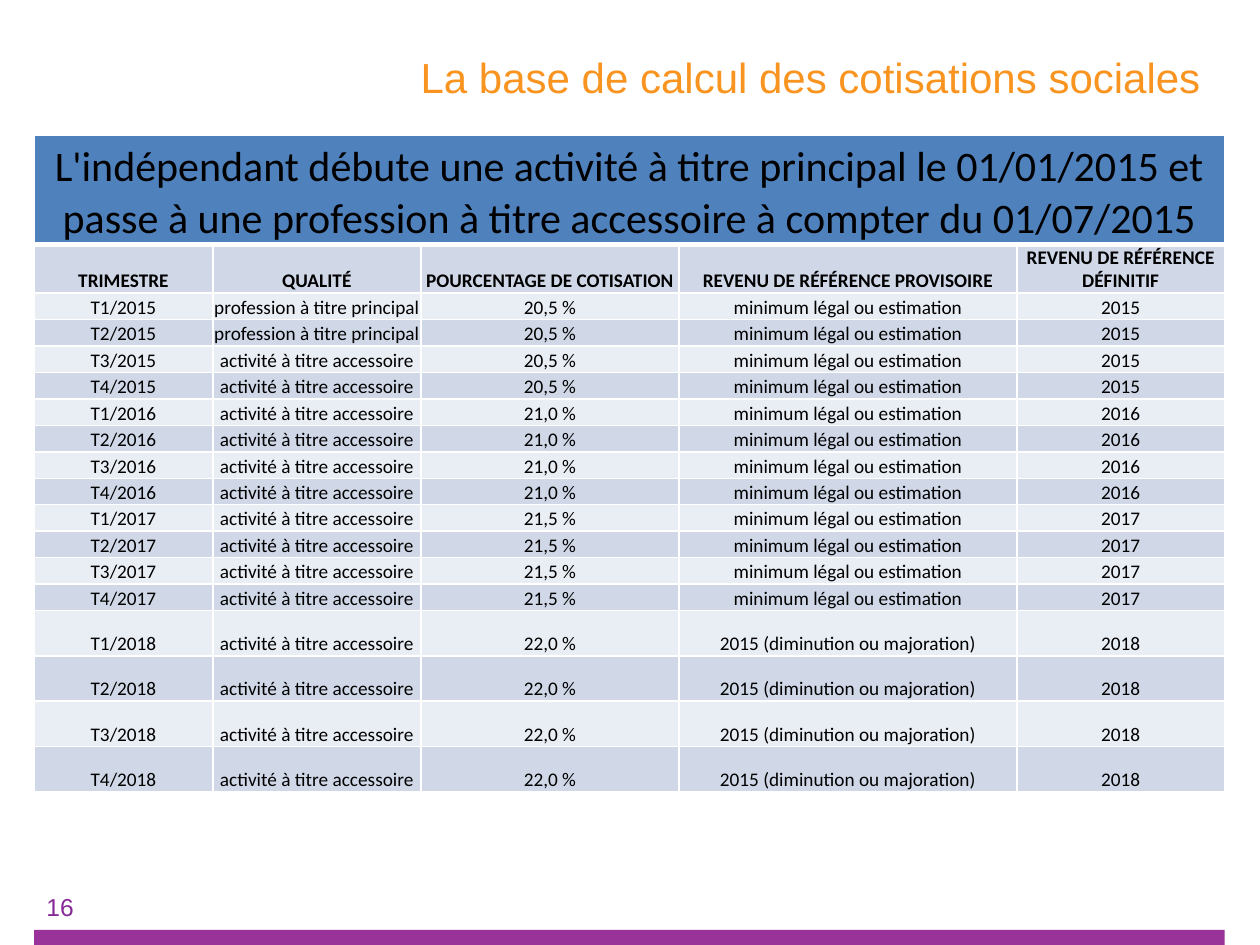
from lxml import etree
from pptx import Presentation
from pptx.dml.color import RGBColor
from pptx.enum.shapes import MSO_SHAPE
from pptx.enum.text import MSO_ANCHOR, PP_ALIGN
from pptx.oxml.ns import qn

RECT = MSO_SHAPE.RECTANGLE
MIDDLE, BOTTOM = MSO_ANCHOR.MIDDLE, MSO_ANCHOR.BOTTOM
LEFT, CENTER, RIGHT = PP_ALIGN.LEFT, PP_ALIGN.CENTER, PP_ALIGN.RIGHT

PX = 9144  # 100 px to the inch
PT = 12700
WHITE, BLACK, BLUE = "FFFFFF", "000000", "4F81BD"
BANDS = ["D0D8E8", "E9EDF4"]
ORANGE, PURPLE, VIOLET = "F8941F", "993399", "862996"

TITLE = "La base de calcul des cotisations sociales "
BANNER = ("L'indépendant débute une activité à titre principal le 01/01/2015 et "
          "passe à une profession à titre accessoire à compter du 01/07/2015")
HEADS = ["TRIMESTRE", "QUALITÉ", "POURCENTAGE DE COTISATION",
         "REVENU DE RÉFÉRENCE PROVISOIRE", "REVENU DE RÉFÉRENCE DÉFINITIF"]
RATES = {2015: "20,5 %", 2016: "21,0 %", 2017: "21,5 %", 2018: "22,0 %"}
COLS = [142, 165, 205, 268, 165]
ROWS = [87] + [21] * 13 + [36] * 4


def color(code):
    return RGBColor.from_string(code)


def emu(*sizes):
    return [size * PX for size in sizes]


def quarters():
    """Return one row of cell texts for each quarter from 2015 to 2018."""
    rows = []
    for year, rate in RATES.items():
        base = "2015 (diminution ou majoration)" if year == 2018 else "minimum légal ou estimation"
        for num in range(1, 5):
            main = year == 2015 and num <= 2
            job = "profession à titre principal" if main else "activité à titre accessoire"
            rows.append([f"T{num}/{year}", job, rate, base, str(year)])
    return rows


class Page:
    def __init__(self, deck):
        self.slide = deck.slides.add_slide(deck.slide_layouts[5])
        self.shapes = self.slide.shapes

    def text(self, frame, words, size, code, font="Arial", bold=False, align=LEFT):
        frame.word_wrap = True
        frame.text = words
        para = frame.paragraphs[0]
        para.alignment = align
        for run in para.runs:
            run.font.size = size * PT
            run.font.name = font
            run.font.bold = bold
            run.font.color.rgb = color(code)

    def bar(self, box, code):
        shape = self.shapes.add_shape(RECT, *emu(*box))
        shape.shadow.inherit = False
        shape.fill.solid()
        shape.fill.fore_color.rgb = color(code)
        shape.line.fill.background()

    def title(self, box, words):
        shape = self.shapes.title
        shape.left, shape.top, shape.width, shape.height = emu(*box)
        shape.text_frame.vertical_anchor = MIDDLE
        self.text(shape.text_frame, words, 24, ORANGE, align=RIGHT)

    def label(self, box, words):
        shape = self.shapes.add_textbox(*emu(*box))
        self.text(shape.text_frame, words, 14, VIOLET)

    def edge(self, cell, side, width):
        """Draw one white border; side is L, R, T or B."""
        line = etree.SubElement(cell._tc.get_or_add_tcPr(), qn(f"a:ln{side}"), w=str(width * PT))
        fill = etree.SubElement(line, qn("a:solidFill"))
        etree.SubElement(fill, qn("a:srgbClr"), val=WHITE)

    def cell(self, cell, row, words):
        for side in "LRTB":
            thick = (row, side) in [(0, "B"), (1, "T")]
            self.edge(cell, side, 3 if thick else 1)
        cell.fill.solid()
        cell.fill.fore_color.rgb = color(BANDS[(row + 1) % 2] if row else BLUE)
        cell.margin_left = cell.margin_right = cell.margin_top = PX
        cell.margin_bottom = 0
        cell.vertical_anchor = BOTTOM
        self.text(cell.text_frame, words, 11 if row else 24, BLACK, "Calibri", row == 1, CENTER)

    def table(self, left, top, lines):
        frame = self.shapes.add_table(len(ROWS), len(COLS),
                                      *emu(left, top, sum(COLS), sum(ROWS)))
        table = frame.table
        for col, width in zip(table.columns, COLS):
            col.width = width * PX
        for row, height in zip(table.rows, ROWS):
            row.height = height * PX
        for r, line in enumerate(lines):
            for c, words in enumerate(line):
                self.cell(table.cell(r, c), r, words)
        table.cell(0, 0).merge(table.cell(0, len(COLS) - 1))


def main():
    deck = Presentation()
    deck.slide_width, deck.slide_height = emu(1000, 750)
    page = Page(deck)
    page.bar((27, 738, 945, 12), PURPLE)
    page.title((229, 0, 743, 122), TITLE)
    banner = [BANNER] + [""] * (len(COLS) - 1)
    page.table(27, 107, [banner, HEADS] + quarters())
    page.label((27, 703, 201, 50), "16")
    deck.save("out.pptx")


if __name__ == "__main__":
    main()
